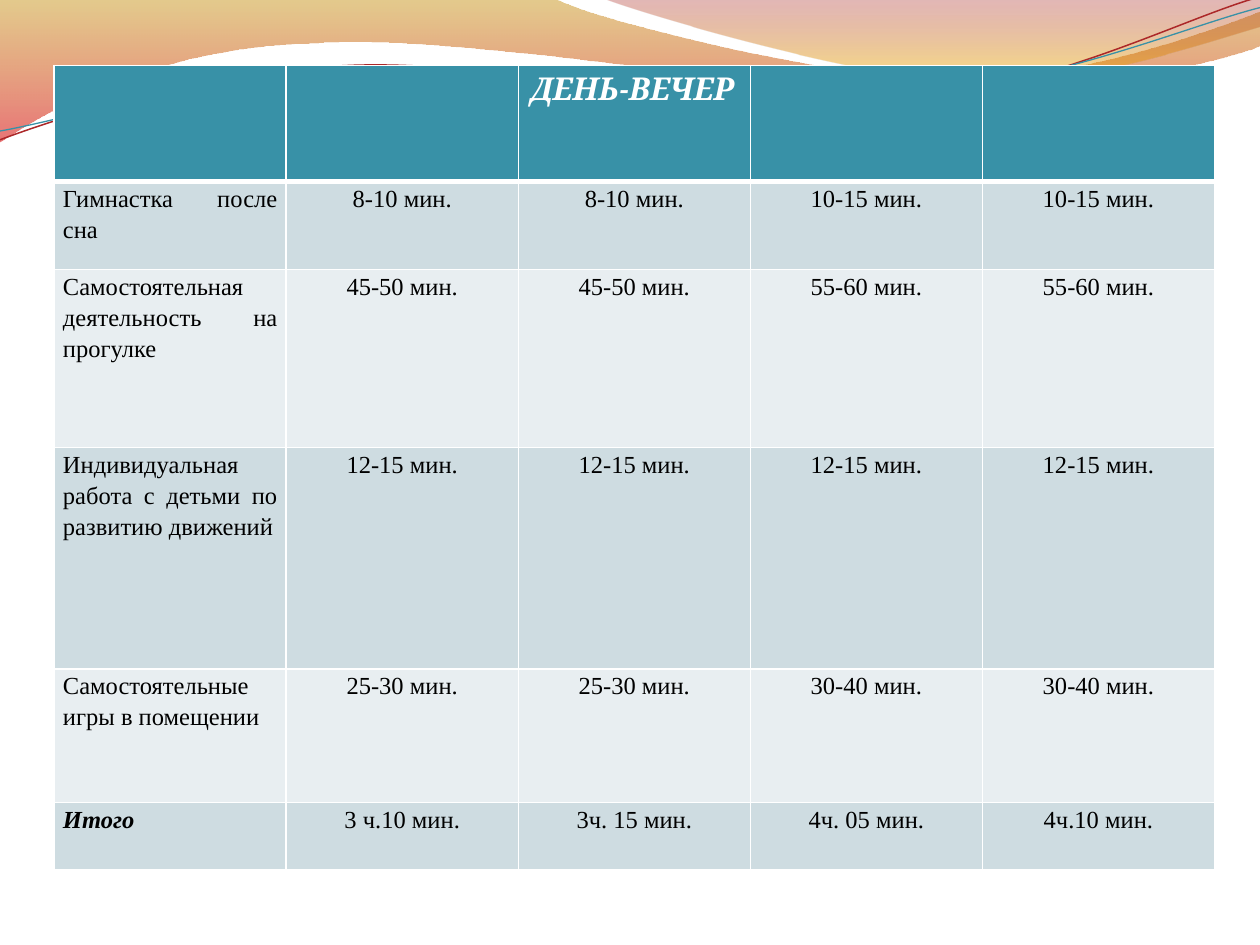
"""Build the slide with the table of daytime and evening activity times."""
from math import cos, radians, sin
from lxml import etree
from pptx import Presentation
from pptx.dml.color import RGBColor
from pptx.enum.text import PP_ALIGN
from pptx.oxml.ns import qn
from pptx.util import Inches, Pt

MID, FULL = PP_ALIGN.CENTER, PP_ALIGN.JUSTIFY
HUES = {
    "gold": "C38B00", "coral": "D60305", "wine": "A11112", "amber": "E9A600",
    "red": "AC2829", "teal": "3891A7", "pale": "CEDCE1", "light": "E8EEF1",
    "white": "FFFFFF", "black": "000000",
}
TILT = 357.3


def draw(shapes, box, segs, turn=0):
    x, y, w, h = (Inches(v) for v in box)
    pen = shapes.build_freeform(x, y)
    pen.add_line_segments([(x + w, y), (x + w, y + h), (x, y + h)], close=not turn)
    shape = pen.convert_to_shape()
    shape.shadow.inherit = False
    shape.rotation = turn
    path = next(shape._element.iter(qn("a:path")))
    for node in list(path):
        path.remove(node)
    midx, midy = box[0] + box[2] / 2, box[1] + box[3] / 2
    angle = radians(-turn)
    for n, seg in enumerate(segs):
        tag = "moveTo" if n == 0 else "lnTo" if len(seg) == 2 else "cubicBezTo"
        node = etree.SubElement(path, qn("a:" + tag))
        for px, py in zip(seg[::2], seg[1::2]):
            dx, dy = px - midx, py - midy
            newx = midx + dx * cos(angle) - dy * sin(angle)
            newy = midy + dx * sin(angle) + dy * cos(angle)
            etree.SubElement(node, qn("a:pt"), x=str(Inches(newx) - x), y=str(Inches(newy) - y))
    if not turn:
        etree.SubElement(path, qn("a:close"))
    return shape


def edge(cell, side, width):
    line = etree.SubElement(cell._tc.get_or_add_tcPr(), qn("a:" + side), w=str(Pt(width)))
    fill = etree.SubElement(line, qn("a:solidFill"))
    etree.SubElement(fill, qn("a:srgbClr"), val=HUES["white"])


deck = Presentation()
deck.slide_width, deck.slide_height = Inches(10), Inches(7.5)
slide = deck.slides.add_slide(deck.slide_layouts[6])
shapes = slide.shapes

waves = [
    ((-0.01, -0.01, 10.02, 1.14),
     [(0, 0), (4.4, -0.01), (4.76, 0.17, 6.64, 0.63, 7.58, 0.63),
      (8.53, 0.63, 9.58, 0.26, 10, 0.09), (10.01, 0.36),
      (9.83, 0.44, 8.7, 0.76, 7.46, 0.75), (6.22, 0.75, 3.82, 0.28, 2.57, 0.34),
      (1.29, 0.36, 0.46, 0.83, -0.01, 1.13), (0, 0)],
     [(0, "gold", 45), (1, "coral", 55)]),
    ((4.79, -0.01, 5.21, 0.7),
     [(4.79, -0.01), (5.09, 0.11, 6.82, 0.62, 7.69, 0.65),
      (8.56, 0.69, 9.61, 0.32, 10, 0.21), (10, 0), (4.79, -0.01)],
     [(0, "wine", 30), (0.8, "amber", 45)]),
]
for box, segs, stops in waves:
    wave = draw(shapes, box, segs)
    wave.line.fill.background()
    wave.fill.gradient()
    wave.fill.gradient_angle = 270
    for stop, (place, hue, alpha) in zip(wave.fill.gradient_stops, stops):
        stop.position = place
        stop.color.rgb = RGBColor.from_string(HUES[hue])
    tints = wave._element.spPr.iter(qn("a:srgbClr"))
    for tint, (place, hue, alpha) in zip(tints, stops):
        etree.SubElement(tint, qn("a:alpha"), val=str(alpha * 1000))

threads = [
    ((-0.02, 0.22, 10.02, 0.71),
     [(0, 1.11), (0.48, 0.93, 1.58, 0.57, 2.77, 0.52), (3.95, 0.47, 5.93, 0.89, 7.13, 0.8),
      (8.33, 0.71, 9.38, 0.15, 9.98, -0.02)], "red", 0.85),
    ((-0.02, 0.3, 10.03, 0.58),
     [(0, 1.04), (0.47, 0.96, 1.64, 0.61, 2.83, 0.56), (4.03, 0.51, 5.97, 0.84, 7.17, 0.75),
      (8.36, 0.67, 9.41, 0.21, 10, 0.06)], "teal", 0.75),
]
for box, segs, hue, width in threads:
    thread = draw(shapes, box, segs, TILT)
    thread.fill.background()
    thread.line.color.rgb = RGBColor.from_string(HUES[hue])
    thread.line.width = Pt(width)

rows = [
    ["", "", "ДЕНЬ-ВЕЧЕР", "", ""],
    ["Гимнастка после сна", "8-10 мин.", "8-10 мин.", "10-15 мин.", "10-15 мин."],
    ["Самостоятельная деятельность на прогулке",
     "45-50 мин.", "45-50 мин.", "55-60 мин.", "55-60 мин."],
    ["Индивидуальная работа с детьми по развитию движений"] + ["12-15 мин."] * 4,
    ["Самостоятельные игры в помещении",
     "25-30 мин.", "25-30 мин.", "30-40 мин.", "30-40 мин."],
    ["Итого", "3 ч.10 мин.", "3ч. 15 мин.", "4ч. 05 мин.", "4ч.10 мин."],
]
highs = [0.92, 0.7, 1.41, 1.76, 1.06, 0.53]
table = shapes.add_table(len(rows), 5, Inches(0.43), Inches(0.52),
                         Inches(9.21), Inches(sum(highs))).table
for col in table.columns:
    col.width = Inches(9.21 / 5)
for r, (row, high) in enumerate(zip(rows, highs)):
    table.rows[r].height = Inches(high)
    head, total = r == 0, r == len(rows) - 1
    for c, text in enumerate(row):
        cell = table.cell(r, c)
        for side in ("lnL", "lnR", "lnT", "lnB"):
            thick = (r, side) in ((0, "lnB"), (1, "lnT"))
            edge(cell, side, 3 if thick else 1)
        cell.fill.solid()
        hue = "teal" if head else "pale" if r % 2 else "light"
        cell.fill.fore_color.rgb = RGBColor.from_string(HUES[hue])
        para = cell.text_frame.paragraphs[0]
        if not head:
            cell.margin_left = cell.margin_right = Inches(0.07)
            cell.margin_top = cell.margin_bottom = 0
            para.line_spacing = 1.15
            para.alignment = MID if c else FULL
        if text:
            run = para.add_run()
            run.text = text
            font = run.font
            font.name = "Cambria" if head else "Times New Roman"
            font.size = Pt(18 if head else 14)
            font.bold = font.italic = head or (total and c == 0)
            font.color.rgb = RGBColor.from_string(HUES["white" if head else "black"])

deck.save("out.pptx")
